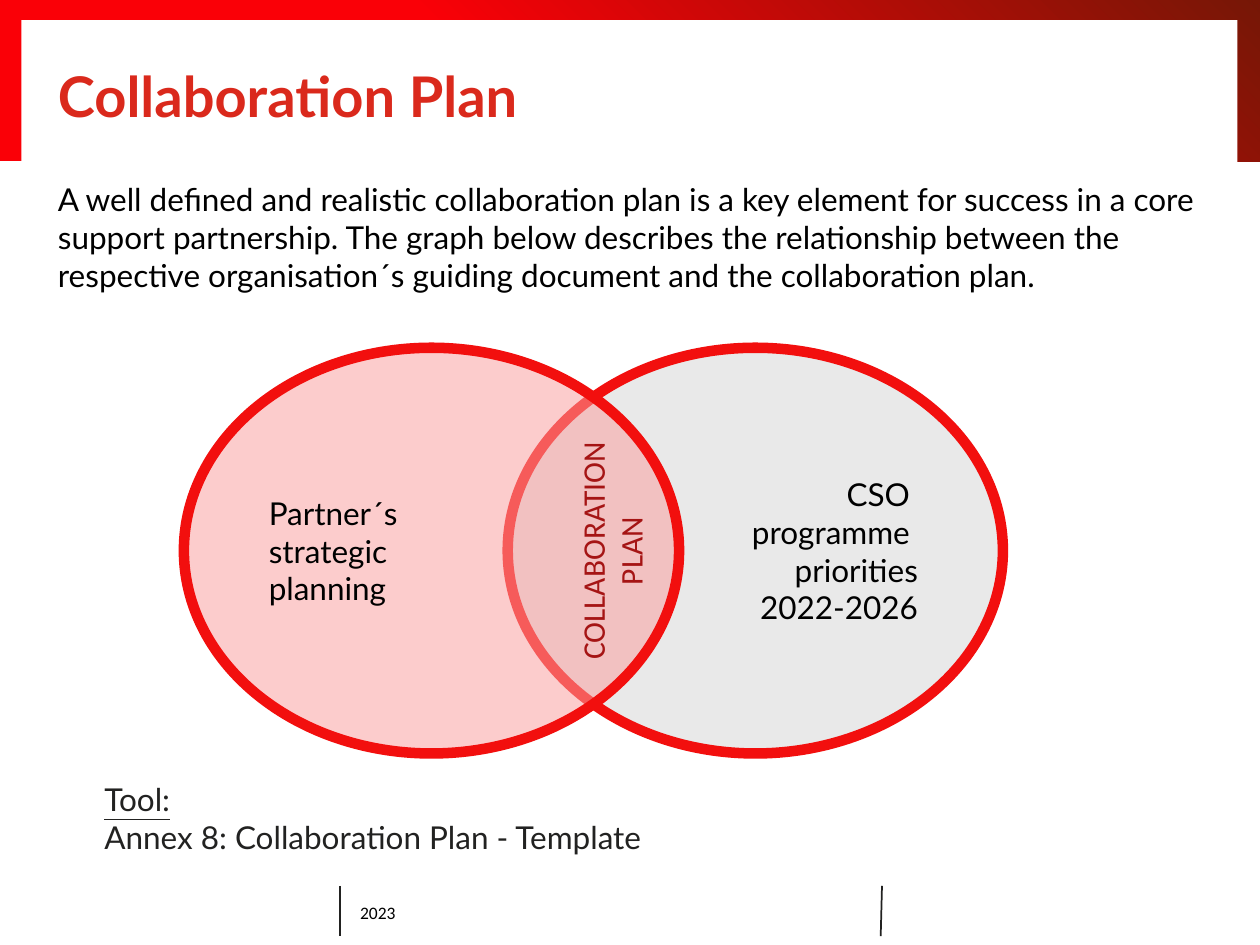
from lxml.etree import SubElement
from pptx import Presentation
from pptx.dml.color import RGBColor
from pptx.enum.shapes import MSO_CONNECTOR, MSO_SHAPE
from pptx.enum.text import MSO_ANCHOR, MSO_AUTO_SIZE, PP_ALIGN
from pptx.oxml.ns import qn
from pptx.util import Inches, Pt

COLORS = {
    "red": "FA0007", "brown": "761706", "white": "FFFFFF", "ink": "222221",
    "title": "DA291C", "black": "000000", "ring": "F20F0E",
    "grey": "E9E9E9", "pink": "FA9F9F", "overlap": "A51414",
}


def rgb(name):
    return RGBColor.from_string(COLORS[name])


def set_text(sp, text, size, font, color, align=PP_ALIGN.LEFT,
             anchor=MSO_ANCHOR.TOP, inset=None):
    """Fill the shape with text, one paragraph a line, in a single style."""
    tf = sp.text_frame
    tf.text = text
    tf.word_wrap = True
    tf.auto_size = MSO_AUTO_SIZE.NONE
    tf.vertical_anchor = anchor
    if inset is not None:
        tf.margin_left = tf.margin_right = Inches(inset)
        tf.margin_top = tf.margin_bottom = Inches(inset)
    for p in tf.paragraphs:
        p.alignment = align
        p.space_before = Pt(0)
        for r in p.runs:
            r.font.size = Pt(size)
            r.font.name = font
            r.font.color.rgb = rgb(color)
    return tf


prs = Presentation()
prs.slide_width, prs.slide_height = Inches(10), Inches(7.5)
s = prs.slides.add_slide(prs.slide_layouts[1])
title, body = s.placeholders

# Header frame, placed behind the title
band = s.shapes.add_shape(MSO_SHAPE.RECTANGLE, 0, 0, Inches(10), Inches(1.28))
band.fill.gradient()
band.fill.gradient_angle = 45
for stop, (position, color) in zip(band.fill.gradient_stops,
                                   [(0.4, "red"), (1, "brown")]):
    stop.position = position
    stop.color.rgb = rgb(color)
panel = s.shapes.add_shape(MSO_SHAPE.RECTANGLE, Inches(0.17), Inches(0.16),
                           Inches(9.65), Inches(1.18))
panel.fill.solid()
panel.fill.fore_color.rgb = rgb("white")
for sp in (band, panel):
    sp.line.fill.background()
    sp.shadow.inherit = False
    title.element.addprevious(sp.element)

# Title and introduction
title.left, title.top = Inches(0.46), Inches(0.48)
title.width, title.height = Inches(9.06), Inches(0.55)
tf = set_text(title, "Collaboration Plan", 32, "Lato", "title",
              anchor=MSO_ANCHOR.MIDDLE, inset=0)
tf.paragraphs[0].runs[0].font.bold = True

body.left, body.top = Inches(0.46), Inches(1.43)
body.width, body.height = Inches(9.06), Inches(0.4)
tf = set_text(
    body,
    "A well defined and realistic collaboration plan is a key element for "
    "success in a core support partnership. The graph below describes the "
    "relationship between the respective organisation´s guiding document "
    "and the collaboration plan.",
    18, "Lato", "black", inset=0)
p = tf.paragraphs[0]
p.space_after = Pt(6)
pPr = p._p.get_or_add_pPr()
pPr.set("marL", "0")
pPr.set("indent", "0")
SubElement(pPr, qn("a:buNone"))

# Footer
for x1, x2 in [(2.7, 2.7), (7, 6.99)]:
    line = s.shapes.add_connector(MSO_CONNECTOR.STRAIGHT, Inches(x1),
                                  Inches(7.03), Inches(x2), Inches(7.43))
    line.line.color.rgb = rgb("ink")
    line.line.width = Pt(1)
    SubElement(line.element.spPr, qn("a:effectLst"))
year = s.shapes.add_textbox(Inches(2.76), Inches(7.04), Inches(4.18), Inches(0.4))
set_text(year, "2023", 10, "Calibri", "black", anchor=MSO_ANCHOR.MIDDLE)

# Overlapping circles
circles = [
    (4.03, "grey", 100, PP_ALIGN.RIGHT, "CSO \nprogramme \npriorities\n2022-2026"),
    (1.46, "pink", 53, PP_ALIGN.LEFT, "Partner´s\nstrategic\nplanning"),
]
for x, color, opacity, align, text in circles:
    sp = s.shapes.add_shape(MSO_SHAPE.FLOWCHART_CONNECTOR, Inches(x),
                            Inches(2.76), Inches(3.93), Inches(3.22))
    sp.shadow.inherit = False
    sp.fill.solid()
    sp.fill.fore_color.rgb = rgb(color)
    if opacity < 100:
        clr = sp.element.spPr.find(qn("a:solidFill")).find(qn("a:srgbClr"))
        SubElement(clr, qn("a:alpha")).set("val", str(opacity * 1000))
    sp.line.color.rgb = rgb("ring")
    sp.line.width = Pt(6)
    set_text(sp, text, 18, "Lato", "black", align, MSO_ANCHOR.MIDDLE)

overlap = s.shapes.add_textbox(Inches(4.55), Inches(3.41), Inches(0.61), Inches(1.93))
tf = set_text(overlap, "COLLABORATION PLAN", 18, "Calibri", "overlap",
              PP_ALIGN.CENTER, inset=0)
tf._txBody.bodyPr.set("vert", "vert270")

# Tool reference
tool = s.shapes.add_textbox(Inches(0.73), Inches(6.14), Inches(5), Inches(0.71))
tf = set_text(tool, "Tool:\nAnnex 8: Collaboration Plan - Template", 18, "Lato",
              "ink", PP_ALIGN.JUSTIFY)
tf.paragraphs[0].runs[0].font.underline = True

prs.save("out.pptx")
